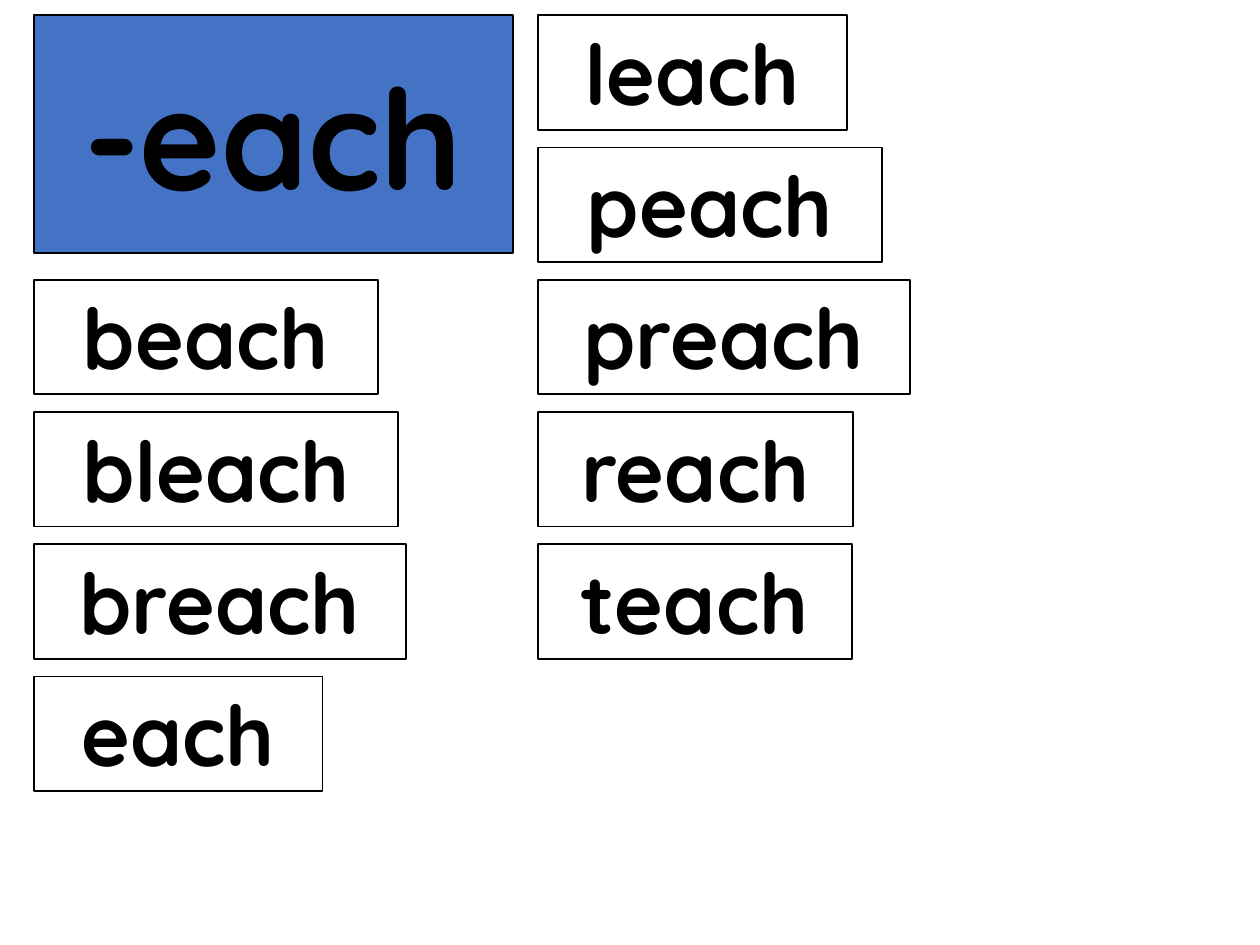
"""Build a word-family slide of -each words as boxed cards in two columns."""
from dataclasses import dataclass

from pptx import Presentation
from pptx.dml.color import RGBColor
from pptx.enum.shapes import MSO_SHAPE as Preset
from pptx.enum.text import MSO_ANCHOR as Anchor, MSO_AUTO_SIZE as AutoSize, PP_ALIGN as Align
from pptx.util import Inches, Pt


@dataclass(frozen=True)
class Theme:
    font: str = "Quicksand"
    ink: RGBColor = RGBColor(0, 0, 0)
    card: RGBColor = RGBColor(0xFF, 0xFF, 0xFF)
    heading: RGBColor = RGBColor(0x44, 0x72, 0xC4)
    word_size: Pt = Pt(48)
    heading_size: Pt = Pt(80)
    outline: Pt = Pt(1)


@dataclass(frozen=True)
class Word:
    text: str
    width: float


@dataclass(frozen=True)
class Column:
    left: float
    first_row: int
    words: tuple[Word, ...]


THEME = Theme()
TOP, ROW_PITCH, CARD_HEIGHT = 0.12, 1.05, 0.91
COLUMNS = (
    Column(0.27, 2, (Word("beach", 2.73), Word("bleach", 2.89),
                     Word("breach", 2.95), Word("each", 2.29))),
    Column(4.27, 0, (Word("leach", 2.45), Word("peach", 2.73), Word("preach", 2.95),
                     Word("reach", 2.5), Word("teach", 2.49))),
)
HEADING_FRAME = {"word_wrap": True, "auto_size": AutoSize.NONE,
                 "vertical_anchor": Anchor.MIDDLE}
CARD_FRAME = {"word_wrap": False, "auto_size": AutoSize.SHAPE_TO_FIT_TEXT,
              "vertical_anchor": Anchor.TOP}


def apply(target, values: dict) -> None:
    """Set each named attribute on the target."""
    for name, value in values.items():
        setattr(target, name, value)


def style_box(box, text: str, fill: RGBColor, size: Pt, frame: dict) -> None:
    """Fill, outline and letter one box."""
    box.fill.solid()
    box.fill.fore_color.rgb = fill
    box.line.color.rgb = THEME.ink
    box.line.width = THEME.outline
    box.text_frame.text = text
    apply(box.text_frame, frame)
    line = box.text_frame.paragraphs[0]
    line.alignment = Align.CENTER
    font = line.runs[0].font
    apply(font, {"name": THEME.font, "size": size, "bold": True})
    font.color.rgb = THEME.ink


def add_heading(slide, text: str) -> None:
    """Turn the title placeholder into the coloured heading box."""
    heading = slide.shapes.title
    apply(heading, {"left": Inches(COLUMNS[0].left), "top": Inches(TOP),
                    "width": Inches(3.8), "height": Inches(1.89)})
    style_box(heading, text, THEME.heading, THEME.heading_size, HEADING_FRAME)


def add_column(slide, column: Column) -> None:
    """Stack the word cards of one column on the row grid."""
    for row, word in enumerate(column.words, column.first_row):
        card = slide.shapes.add_shape(
            Preset.RECTANGLE, Inches(column.left), Inches(TOP + row * ROW_PITCH),
            Inches(word.width), Inches(CARD_HEIGHT))
        card.shadow.inherit = False
        style_box(card, f" {word.text} ", THEME.card, THEME.word_size, CARD_FRAME)


def main() -> None:
    """Build and save the slide."""
    deck = Presentation()
    apply(deck, {"slide_width": Inches(10), "slide_height": Inches(7.5)})
    slide = deck.slides.add_slide(deck.slide_layouts.get_by_name("Title Only"))
    add_heading(slide, "-each")
    for column in COLUMNS:
        add_column(slide, column)
    deck.save("out.pptx")


if __name__ == "__main__":
    main()
